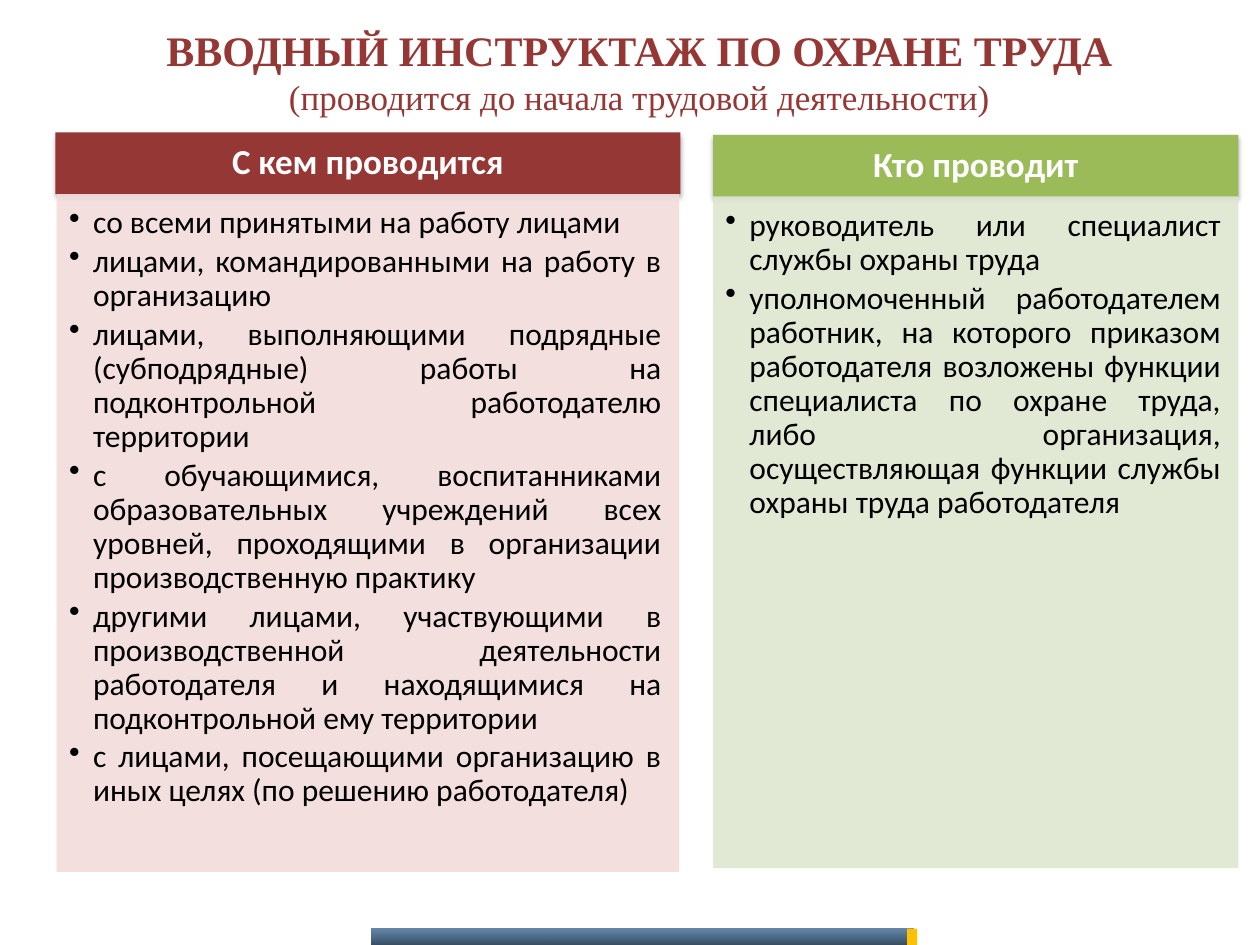
from dataclasses import dataclass

from lxml import etree
from pptx import Presentation
from pptx.dml.color import RGBColor
from pptx.enum.shapes import MSO_SHAPE
from pptx.enum.text import MSO_ANCHOR, PP_ALIGN
from pptx.oxml.ns import qn
from pptx.util import Inches, Pt

RECTANGLE = MSO_SHAPE.RECTANGLE
TOP, MIDDLE = MSO_ANCHOR.TOP, MSO_ANCHOR.MIDDLE
CENTER, JUSTIFY = PP_ALIGN.CENTER, PP_ALIGN.JUSTIFY


@dataclass(frozen=True)
class Theme:
    title_font: str = "Times New Roman"
    body_font: str = "Calibri"
    title_size: int = 24
    subtitle_size: int = 20
    heading_size: int = 20
    body_size: int = 18
    red: str = "953735"
    pale_red: str = "F2DCDB"
    green: str = "9BBB59"
    pale_green: str = "DEE7D1"
    amber: str = "FFC000"
    strip_top: str = "003C73"
    strip_bottom: str = "001C35"
    white: str = "FFFFFF"
    black: str = "000000"


THEME = Theme()

AUDIENCE = [
    "со всеми принятыми на работу лицами",
    "лицами, командированными на работу в организацию",
    "лицами, выполняющими подрядные (субподрядные) работы на подконтрольной работодателю территории",
    "с обучающимися, воспитанниками образовательных учреждений всех уровней, "
    "проходящими в организации производственную практику",
    "другими лицами, участвующими в производственной деятельности работодателя "
    "и находящимися на подконтрольной ему территории",
    "с лицами, посещающими организацию в иных целях (по решению работодателя)",
]
INSTRUCTORS = [
    "руководитель или специалист службы охраны труда",
    "уполномоченный работодателем работник, на которого приказом работодателя "
    "возложены функции специалиста по охране труда, либо организация, "
    "осуществляющая функции службы охраны труда работодателя",
]


def add_block(slide, box, color):
    block = slide.shapes.add_shape(RECTANGLE, *(Inches(length) for length in box))
    block.fill.solid()
    block.fill.fore_color.rgb = RGBColor.from_string(color)
    block.line.fill.background()
    block.shadow.inherit = False
    return block


def set_opacity(block, *percents):
    colors = block.element.spPr.iter(qn("a:srgbClr"))
    for color, percent in zip(list(colors), percents):
        etree.SubElement(color, qn("a:alpha"), val=str(percent * 1000))


def add_shadow(block):
    effects = block.element.spPr.find(qn("a:effectLst"))
    shadow = etree.SubElement(
        effects, qn("a:outerShdw"), blurRad=str(Pt(3.1)), dist=str(Pt(1.8)),
        dir="5400000", rotWithShape="0")
    color = etree.SubElement(shadow, qn("a:srgbClr"), val=THEME.black)
    etree.SubElement(color, qn("a:alpha"), val="35000")


def prepare_frame(block, anchor, insets):
    frame = block.text_frame
    frame.word_wrap = True
    frame.vertical_anchor = anchor
    (frame.margin_left, frame.margin_top,
     frame.margin_right, frame.margin_bottom) = (Inches(inset) for inset in insets)
    return frame


def style(paragraph, alignment, font, size, color, bold=False):
    paragraph.alignment = alignment
    paragraph.font.name = font
    for run in paragraph.runs:
        run.font.name = font
        run.font.size = Pt(size)
        run.font.bold = bold
        run.font.color.rgb = RGBColor.from_string(color)


def add_bullet(paragraph):
    properties = paragraph._p.get_or_add_pPr()
    properties.set("marL", str(Inches(0.19)))
    properties.set("indent", str(Inches(-0.19)))
    etree.SubElement(properties, qn("a:buChar"), char="•")


def add_title(slide, box):
    title_box = slide.shapes.add_textbox(*(Inches(length) for length in box))
    frame = prepare_frame(title_box, MIDDLE, [0.12] * 4)
    title = frame.paragraphs[0]
    title.text = "ВВОДНЫЙ ИНСТРУКТАЖ ПО ОХРАНЕ ТРУДА"
    style(title, CENTER, THEME.title_font, THEME.title_size, THEME.red, bold=True)
    subtitle = frame.add_paragraph()
    subtitle.text = "(проводится до начала трудовой деятельности)"
    style(subtitle, CENTER, THEME.title_font, THEME.subtitle_size, THEME.red)


def add_column(slide, box, heading_text, items, heading_color, body_color, overhang=0):
    left, top, width, height = box
    heading_height = 0.49
    heading_box = (left - overhang, top, width + 2 * overhang, heading_height)
    heading = add_block(slide, heading_box, heading_color)
    add_shadow(heading)
    frame = prepare_frame(heading, MIDDLE, (0.16, 0.09, 0.16, 0.09))
    frame.text = heading_text
    frame.paragraphs[0].line_spacing = 0.9
    style(frame.paragraphs[0], CENTER, THEME.body_font, THEME.heading_size,
          THEME.white, bold=True)

    body_box = (left, top + heading_height, width, height - heading_height)
    body = add_block(slide, body_box, body_color)
    set_opacity(body, 90)
    frame = prepare_frame(body, TOP, (0.1, 0.1, 0.14, 0.16))
    frame.text = "\n".join(items)
    for item in frame.paragraphs:
        add_bullet(item)
        item.line_spacing = 0.9
        item.space_after = Pt(0.15 * THEME.body_size)
        style(item, JUSTIFY, THEME.body_font, THEME.body_size, THEME.black)


def add_footer_strip(slide, box):
    left, top, width, height = box
    strip = add_block(slide, box, THEME.strip_top)
    strip.fill.gradient()
    strip.fill.gradient_angle = 270
    for stop, color in zip(strip.fill.gradient_stops, (THEME.strip_top, THEME.strip_bottom)):
        stop.color.rgb = RGBColor.from_string(color)
    set_opacity(strip, 60, 80)
    add_block(slide, (left + width - 0.05, top, 0.08, height), THEME.amber)


def main():
    presentation = Presentation()
    presentation.slide_width = Inches(10)
    presentation.slide_height = Inches(7.5)
    slide = presentation.slides.add_slide(presentation.slide_layouts[6])
    add_footer_strip(slide, (2.95, 7.37, 4.3, 0.13))
    add_title(slide, (0.35, 0.21, 9.45, 0.71))
    add_column(slide, (0.45, 1.05, 4.94, 5.87), "С кем проводится", AUDIENCE,
               THEME.red, THEME.pale_red, overhang=0.01)
    add_column(slide, (5.66, 1.07, 4.17, 5.82), "Кто проводит", INSTRUCTORS,
               THEME.green, THEME.pale_green)
    presentation.save("out.pptx")


if __name__ == "__main__":
    main()
